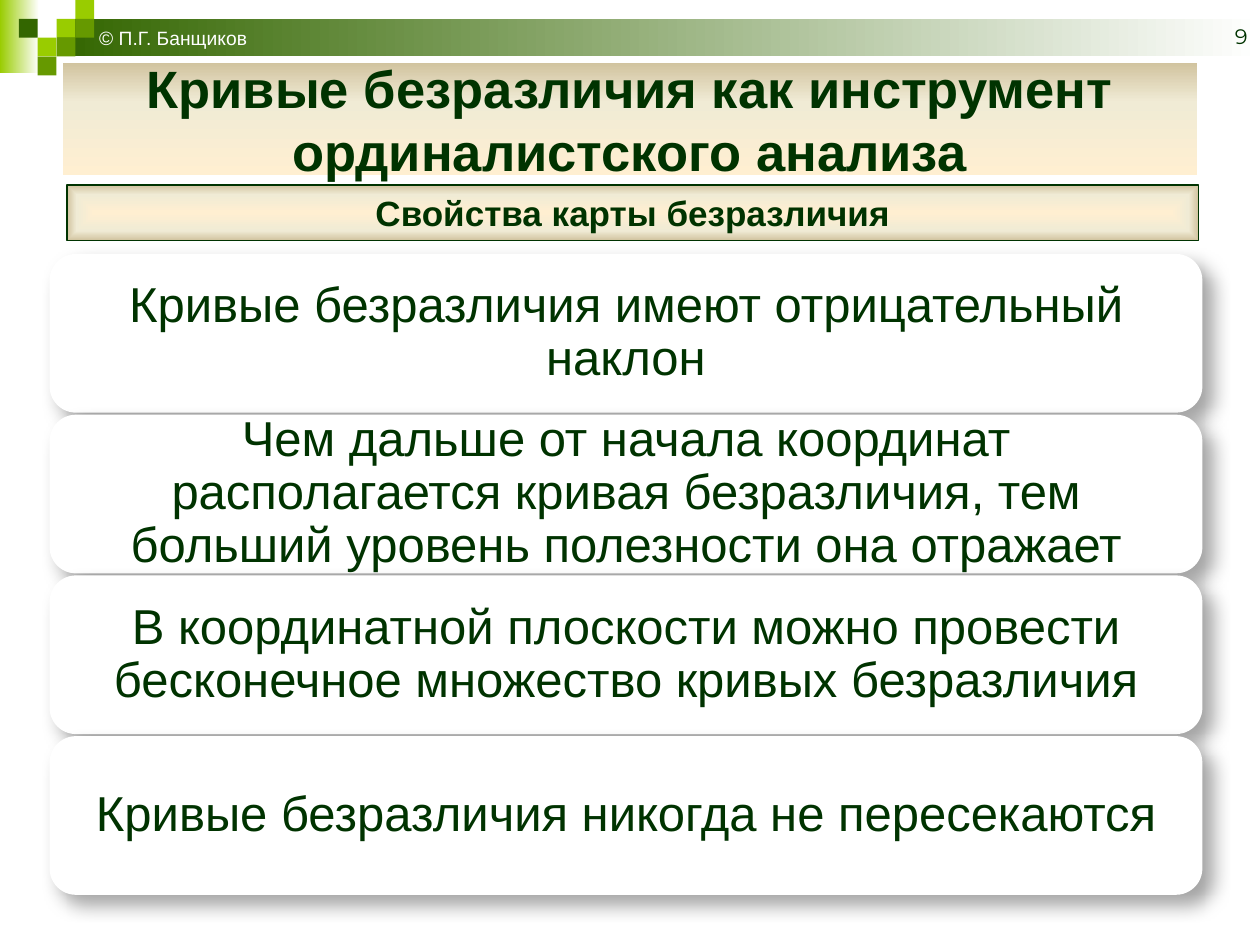
import pptx
import pptx.util
import pptx.dml.color
import pptx.enum.shapes
import pptx.enum.text
import pptx.oxml
import pptx.oxml.ns
import lxml.etree

Cm = pptx.util.Cm
Pt = pptx.util.Pt
SHAPE = pptx.enum.shapes.MSO_SHAPE
ALIGN = pptx.enum.text.PP_ALIGN
ANCHOR = pptx.enum.text.MSO_ANCHOR
qn = pptx.oxml.ns.qn

# Content
TITLE = "Кривые безразличия как инструмент ординалистского анализа"
SUBTITLE = "Свойства карты безразличия"
AUTHOR = "© П.Г. Банщиков"
PAGE_NUMBER = "9"
PROPERTIES = [
    "Кривые безразличия имеют отрицательный наклон",
    "Чем дальше от начала координат располагается кривая безразличия, "
    "тем больший уровень полезности она отражает",
    "В координатной плоскости можно провести бесконечное множество кривых безразличия",
    "Кривые безразличия никогда не пересекаются",
]

# Look
COLORS = {
    "ink": "003300", "white": "FFFFFF", "black": "000000",
    "dark": "336600", "mid": "669900", "lime": "99CC00",
    "cream": "FFEFD1", "sand": "F0EBD5", "tan": "D1C39F",
}
PARCHMENT = [(0, "cream"), (65, "sand"), (100, "tan")]
MOSAIC_CELL = 0.38
MOSAIC = [  # column, row, colour
    (3, 1, "lime"), (4, 0, "lime"), (4, 1, "mid"), (2, 2, "lime"),
    (1, 1, "dark"), (3, 2, "mid"), (2, 3, "mid"),
]
CARD_LEFT, CARD_TOP, CARD_WIDTH, CARD_HEIGHT, CARD_STEP = 1, 5.12, 23.24, 3.2, 3.24


def rgb(name):
    return pptx.dml.color.RGBColor.from_string(COLORS[name])


def add_box(page, left, top, width, height, kind=SHAPE.RECTANGLE, fill=None):
    box = page.shapes.add_shape(kind, Cm(left), Cm(top), Cm(width), Cm(height))
    box.shadow.inherit = False
    box.line.fill.background()
    if fill:
        box.fill.solid()
        box.fill.fore_color.rgb = rgb(fill)
    return box


def set_gradient(box, stops, angle=None):
    """Linear gradient at a clockwise angle, or from the centre without one."""
    box.fill.gradient()
    gradient = box._element.spPr.find(qn("a:gradFill"))
    for child in list(gradient):
        gradient.remove(child)
    stop_list = lxml.etree.SubElement(gradient, qn("a:gsLst"))
    for position, name in stops:
        stop = lxml.etree.SubElement(stop_list, qn("a:gs"), pos=str(position * 1000))
        lxml.etree.SubElement(stop, qn("a:srgbClr"), val=COLORS[name])
    if angle is None:
        centre = lxml.etree.SubElement(gradient, qn("a:path"), {"path": "rect"})
        lxml.etree.SubElement(centre, qn("a:fillToRect"),
                              {side: "50000" for side in "ltrb"})
    else:
        lxml.etree.SubElement(gradient, qn("a:lin"), ang=str(angle * 60000), scaled="1")


def add_soft_shadow(box):
    effects = box._element.spPr.find(qn("a:effectLst"))
    shadow = lxml.etree.SubElement(
        effects, qn("a:outerShdw"), blurRad=str(Pt(10.2)), dist=str(Pt(8)),
        dir=str(45 * 60000), algn="tl", rotWithShape="0")
    color = lxml.etree.SubElement(shadow, qn("a:srgbClr"), val=COLORS["black"])
    lxml.etree.SubElement(color, qn("a:alpha"), val="35000")


def write(box, text, size, color="ink", font="Arial", bold=False, align=ALIGN.CENTER,
          anchor=ANCHOR.MIDDLE, spacing=None, inset=None):
    frame = box.text_frame
    frame.word_wrap = True
    frame.vertical_anchor = anchor
    if inset is not None:
        frame.margin_left = frame.margin_right = Cm(inset)
        frame.margin_top = frame.margin_bottom = Cm(inset)
    para = frame.paragraphs[0]
    para.alignment = align
    if spacing:
        para.line_spacing = spacing
    span = para.add_run()
    span.text = text
    span.font.name = font
    span.font.size = Pt(size)
    span.font.bold = bold
    span.font.color.rgb = rgb(color)


def main():
    deck = pptx.Presentation()
    deck.slide_width, deck.slide_height = Cm(25.4), Cm(19.05)
    page = deck.slides.add_slide(deck.slide_layouts[6])

    # Header band and mosaic
    set_gradient(add_box(page, 0, 0, 0.79, 1.47), [(0, "lime"), (100, "white")], 0)
    set_gradient(add_box(page, 1.14, 0.38, 24.26, 0.76), [(0, "dark"), (100, "white")], 0)
    for column, row, color in MOSAIC:
        add_box(page, column * MOSAIC_CELL, row * MOSAIC_CELL,
                MOSAIC_CELL, MOSAIC_CELL, fill=color)

    # Page number and author
    number = page.shapes.add_textbox(Cm(23.83), Cm(0.41), Cm(1.57), Cm(0.69))
    write(number, PAGE_NUMBER, 12, font="Montserrat", align=ALIGN.RIGHT,
          anchor=ANCHOR.BOTTOM)
    author = page.shapes.add_textbox(Cm(1.75), Cm(0.41), Cm(3.76), Cm(0.74))
    write(author, AUTHOR, 11, color="white", align=ALIGN.LEFT, anchor=ANCHOR.TOP)

    # Subtitle
    subtitle = add_box(page, 1.35, 3.73, 22.81, 1.12)
    set_gradient(subtitle, PARCHMENT)
    subtitle.line.color.rgb = rgb("ink")
    subtitle.line.width = Pt(1)
    write(subtitle, SUBTITLE, 20, bold=True)

    # Property cards
    for index, text in enumerate(PROPERTIES):
        card = add_box(page, CARD_LEFT, CARD_TOP + index * CARD_STEP, CARD_WIDTH,
                       CARD_HEIGHT, kind=SHAPE.ROUNDED_RECTANGLE, fill="white")
        add_soft_shadow(card)
        write(card, text, 28, spacing=0.9, inset=0.3)

    # Title
    title = add_box(page, 1.27, 1.27, 22.86, 2.26)
    set_gradient(title, PARCHMENT, 270)
    write(title, TITLE, 30, bold=True)

    deck.save("out.pptx")


if __name__ == "__main__":
    main()
